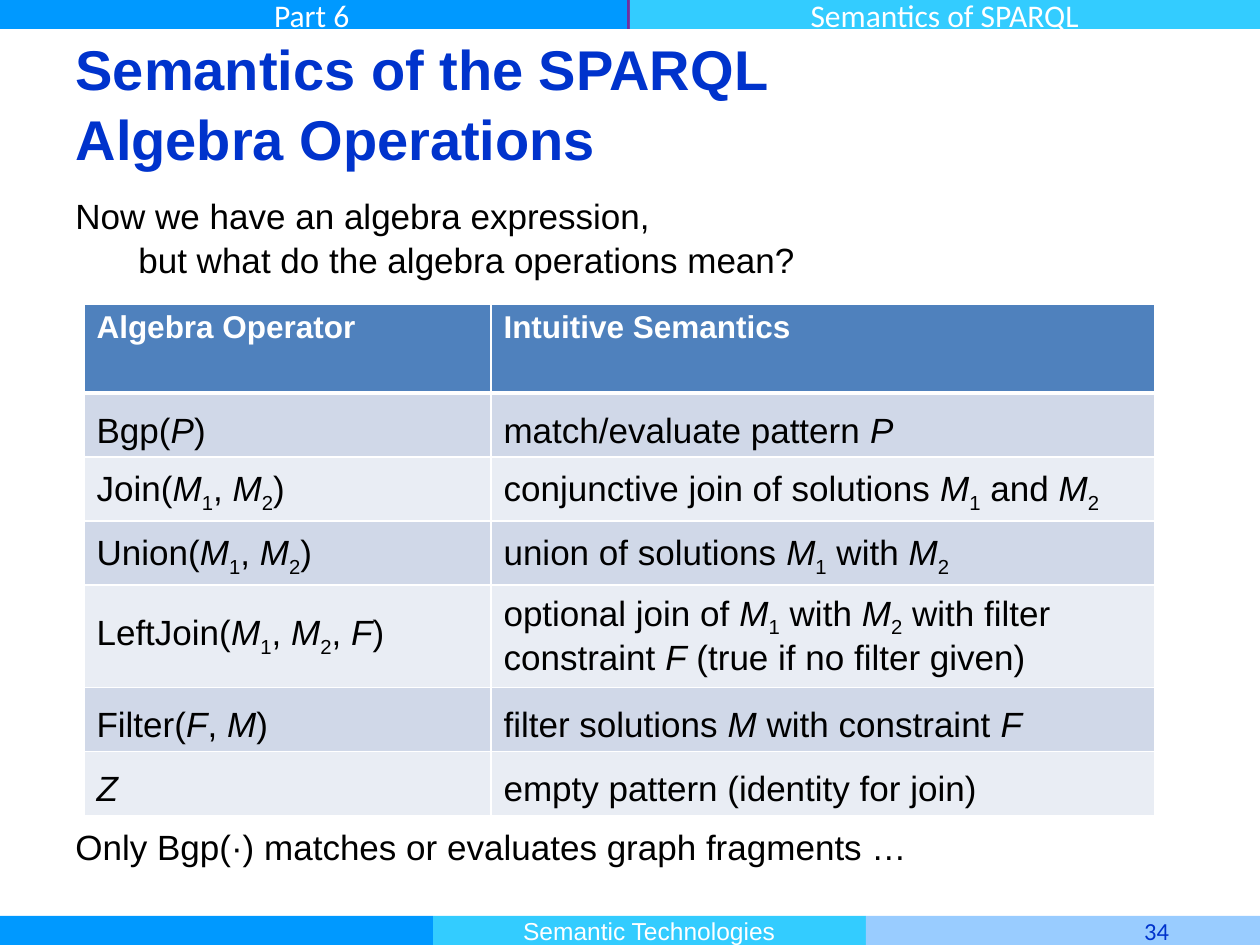
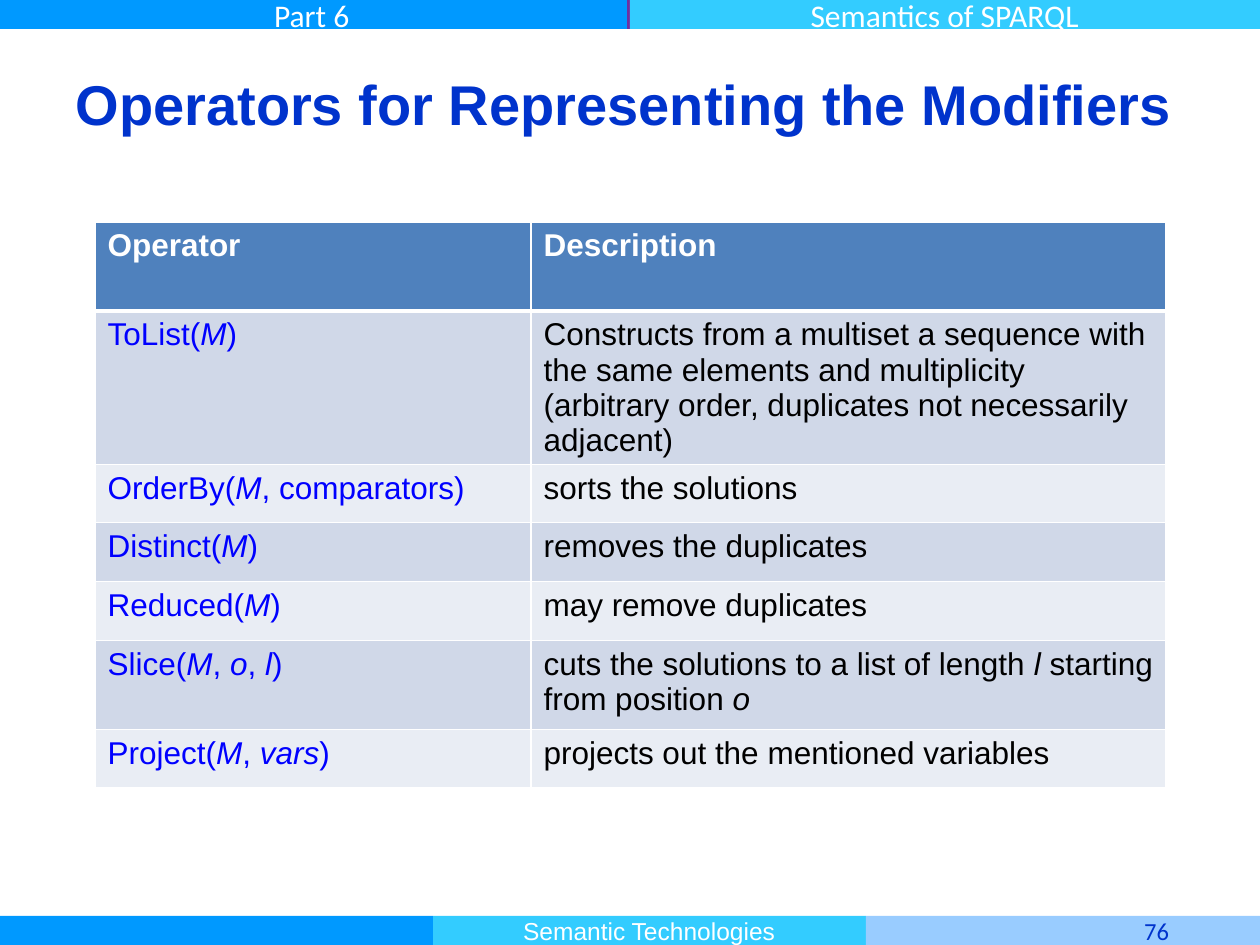
from dataclasses import dataclass
from typing import Optional

from lxml import etree
from pptx import Presentation
from pptx.dml.color import RGBColor
from pptx.enum.shapes import MSO_SHAPE
from pptx.enum.text import MSO_ANCHOR, MSO_AUTO_SIZE, PP_ALIGN
from pptx.oxml.ns import qn
from pptx.util import Emu, Pt

RECTANGLE = MSO_SHAPE.RECTANGLE
TOP, MIDDLE, BOTTOM = MSO_ANCHOR.TOP, MSO_ANCHOR.MIDDLE, MSO_ANCHOR.BOTTOM
LEFT, CENTER, RIGHT = PP_ALIGN.LEFT, PP_ALIGN.CENTER, PP_ALIGN.RIGHT
NO_AUTOFIT = MSO_AUTO_SIZE.NONE

EMU_PER_PX = 914400 / 126
PAGE_WIDTH, PAGE_HEIGHT = 1260, 945
BAND_HEIGHT = 29
FOOTER_TOP = PAGE_HEIGHT - BAND_HEIGHT
FOOTER_WIDTH = 433
TEXT_LEFT, TEXT_WIDTH = 63, 1134
LOOSE_LINES = 1.04

COLORS = {
    "blue": "0099FF",
    "cyan": "33CCFF",
    "pale": "99CCFF",
    "purple": "7030A0",
    "title": "0033CC",
    "operator": "0000FF",
    "text": "000000",
    "white": "FFFFFF",
    "header": "4F81BD",
    "odd_row": "D0D8E8",
    "even_row": "E9EDF4",
}


@dataclass(frozen=True)
class Style:
    size: int
    color: str = "text"
    font: str = "Arial"
    bold: bool = False


@dataclass(frozen=True)
class Band:
    left: int
    top: int
    width: int
    fill: str
    text: str = ""
    style: Optional[Style] = None
    align: PP_ALIGN = CENTER
    right_inset: int = 13


@dataclass(frozen=True)
class Row:
    height: int
    operator: str
    meaning: str
    anchor: MSO_ANCHOR = TOP


@dataclass(frozen=True)
class Grid:
    left: int
    top: int
    widths: tuple[int, int]
    rows: list[Row]
    operator_style: Style
    meaning_style: Style


TITLE = Style(32, "title", bold=True)
BODY = Style(20)
HEADER_CELL = Style(18, "white", bold=True)
TOP_BAND = Style(18, "white", "Calibri")
FOOTER = Style(14, "white")
PAGE_NUMBER = Style(14, "title", "Calibri")

# Bands that every page carries
BANDS = [
    Band(0, 0, 630, "purple"),
    Band(0, FOOTER_TOP, FOOTER_WIDTH, "blue"),
    Band(FOOTER_WIDTH, FOOTER_TOP, FOOTER_WIDTH, "cyan",
         "Semantic Technologies", FOOTER),
    Band(-3, 0, 630, "blue", "Part 6", TOP_BAND),
    Band(630, 0, 630, "cyan", "Semantics of SPARQL", TOP_BAND),
]

# Table contents: "|" separates spans, "/" marks italics, "_" a subscript
ALGEBRA = Grid(84, 304, (407, 664), [
    Row(89, "Algebra Operator", "Intuitive Semantics"),
    Row(64, "Bgp(|/P|)", "match/evaluate pattern |/P", BOTTOM),
    Row(64, "Join(|/M|_1|, |/M|_2|)",
        "conjunctive join of solutions |/M|_1| and |/M|_2", BOTTOM),
    Row(64, "Union(|/M|_1|, |/M|_2|)",
        "union of solutions |/M|_1| with |/M|_2", BOTTOM),
    Row(86, "LeftJoin(|/M|_1|, |/M|_2|, |/F|)",
        "optional join of |/M|_1| with |/M|_2| with filter constraint "
        "|/F| (true if no filter given)", MIDDLE),
    Row(64, "Filter(|/F|, |/M|)",
        "filter solutions |/M| with constraint |/F", BOTTOM),
    Row(64, "/Z", "empty pattern (identity for join)", BOTTOM),
], BODY, BODY)

MODIFIERS = Grid(95, 222, (436, 635), [
    Row(89, "Operator", "Description"),
    Row(89, "ToList(|/M|)",
        "Constructs from a multiset a sequence with the same elements and "
        "multiplicity (arbitrary order, duplicates not necessarily adjacent)"),
    Row(58, "OrderBy(|/M|, comparators)", "sorts the solutions"),
    Row(59, "Distinct(|/M|)", "removes the duplicates"),
    Row(59, "Reduced(|/M|)", "may remove duplicates"),
    Row(89, "Slice(|/M|, |/o|, |/l|)",
        "cuts the solutions to a list of length |/l |starting from position |/o"),
    Row(58, "Project(|/M|, |/vars|)", "projects out the mentioned variables"),
], Style(18, "operator"), Style(18))


def px(length: int) -> Emu:
    return Emu(round(length * EMU_PER_PX))


def rgb(name: str) -> RGBColor:
    return RGBColor.from_string(COLORS[name])


def write(frame, text: str, style: Style, align: PP_ALIGN = LEFT,
          spacing: Optional[float] = None) -> None:
    """Fill a text frame span by span, following the span marks."""
    frame.word_wrap = True
    para = frame.paragraphs[0]
    para.alignment = align
    if spacing:
        para.line_spacing = spacing
    for number, line in enumerate(text.split("\n")):
        if number:
            para.add_line_break()
        for part in line.split("|"):
            mark = part[0] if part[0] in "/_" else ""
            span = para.add_run()
            span.text = part.removeprefix(mark)
            font = span.font
            font.name, font.size = style.font, Pt(style.size)
            font.bold, font.italic = style.bold, mark == "/"
            font.color.rgb = rgb(style.color)
            if mark == "_":
                span.font._element.set("baseline", "-25000")


def add_band(page, band: Band) -> None:
    box = page.shapes.add_shape(RECTANGLE, px(band.left), px(band.top),
                                px(band.width), px(BAND_HEIGHT))
    box.shadow.inherit = False
    box.fill.solid()
    box.fill.fore_color.rgb = rgb(band.fill)
    box.line.fill.background()
    if band.style:
        frame = box.text_frame
        frame.vertical_anchor = MIDDLE
        frame.margin_right = px(band.right_inset)
        write(frame, band.text, band.style, band.align)


def add_page(deck, title: str, number: int):
    page = deck.slides.add_slide(deck.slide_layouts[5])
    number_left = 2 * FOOTER_WIDTH
    number_band = Band(number_left, FOOTER_TOP, PAGE_WIDTH - number_left, "pale",
                       str(number), PAGE_NUMBER, RIGHT, 91)
    for band in [*BANDS, number_band]:
        add_band(page, band)

    box = page.shapes.title
    box.left, box.top = px(TEXT_LEFT), px(38)
    box.width, box.height = px(TEXT_WIDTH), px(127)
    box.text_frame.auto_size = NO_AUTOFIT
    box.text_frame.vertical_anchor = MIDDLE
    write(box.text_frame, title, TITLE, spacing=LOOSE_LINES)
    return page


def add_text(page, top: int, height: int, text: str) -> None:
    box = page.shapes.add_textbox(px(TEXT_LEFT), px(top), px(TEXT_WIDTH), px(height))
    write(box.text_frame, text, BODY, spacing=LOOSE_LINES)


def add_borders(cell, top: int, bottom: int) -> None:
    properties = cell._tc.get_or_add_tcPr()
    for side, points in (("L", 1), ("R", 1), ("T", top), ("B", bottom)):
        line = etree.SubElement(properties, qn(f"a:ln{side}"), w=str(Pt(points)))
        fill = etree.SubElement(line, qn("a:solidFill"))
        etree.SubElement(fill, qn("a:srgbClr"), val=COLORS["white"])


def add_grid(page, grid: Grid) -> None:
    height = sum(row.height for row in grid.rows)
    table = page.shapes.add_table(len(grid.rows), len(grid.widths), px(grid.left),
                                  px(grid.top), px(sum(grid.widths)), px(height)).table
    for column, width in zip(table.columns, grid.widths):
        column.width = px(width)
    for index, row in enumerate(grid.rows):
        table.rows[index].height = px(row.height)
        shade = "odd_row" if index % 2 else "even_row"
        texts = ((row.operator, grid.operator_style), (row.meaning, grid.meaning_style))
        for column, (text, style) in enumerate(texts):
            cell = table.cell(index, column)
            add_borders(cell, 3 if index == 1 else 1, 3 if index == 0 else 1)
            cell.fill.solid()
            cell.fill.fore_color.rgb = rgb(shade if index else "header")
            cell.vertical_anchor = row.anchor
            write(cell.text_frame, text, style if index else HEADER_CELL)


def main() -> None:
    deck = Presentation()
    deck.slide_width, deck.slide_height = px(PAGE_WIDTH), px(PAGE_HEIGHT)

    # Algebra operations
    page = add_page(deck, "Semantics of the SPARQL\nAlgebra Operations", 34)
    add_text(page, 187, 100,
             "Now we have an algebra expression,\n"
             "\tbut what do the algebra operations mean?")
    add_grid(page, ALGEBRA)
    add_text(page, 818, 55, "Only Bgp(·) matches or evaluates graph fragments …")

    # Solution modifiers
    page = add_page(deck, "Operators for Representing the Modifiers", 76)
    add_grid(page, MODIFIERS)

    deck.save("out.pptx")


if __name__ == "__main__":
    main()
